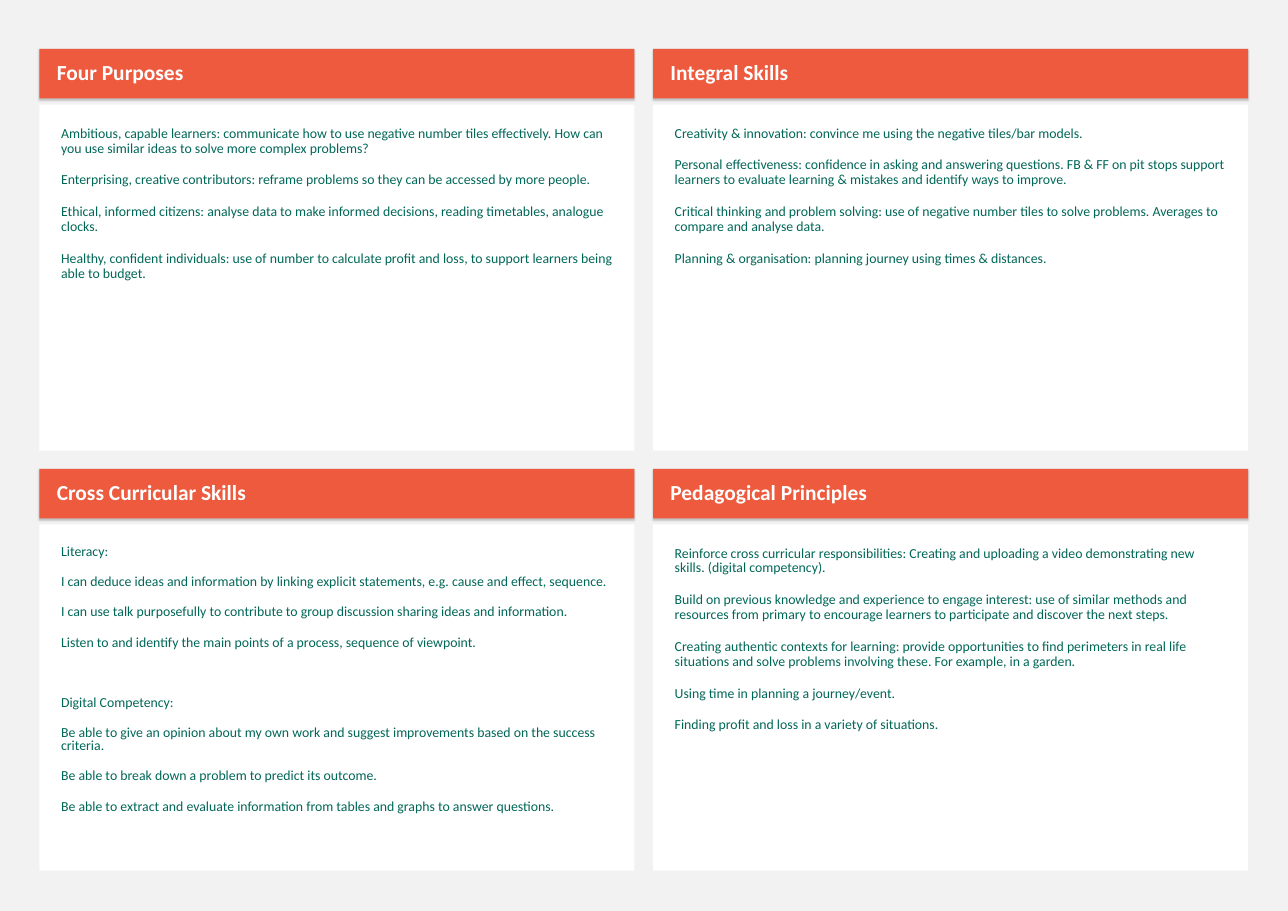
from lxml import etree
from pptx import Presentation
from pptx.dml.color import RGBColor
from pptx.enum import shapes, text
from pptx.oxml import ns
from pptx.util import Cm, Pt

HUES = {"page": "F2F2F2", "head": "ED5A3E", "card": "FFFFFF",
        "body": "006758", "title": "FFFFFF", "shade": "000000"}

# Grid of two columns by two rows, in centimetres
LEFT, TOP = 0.91, 1.13
STEP_X, STEP_Y = 14.15, 9.68
WIDE, HEAD_H, CARD_H = 13.72, 1.14, 7.98
CARD_DY = 1.28

# Heading, line spacing, groups of paragraphs
PANELS = [
    ("Four Purposes", 0.9, [[
        "Ambitious, capable learners: communicate how to use negative number tiles effectively. "
        "How can you use similar ideas to solve more complex problems?",
        "Enterprising, creative contributors: reframe problems so they can be accessed by more people.",
        "Ethical, informed citizens: analyse data to make informed decisions, reading timetables, "
        "analogue clocks.",
        "Healthy, confident individuals: use of number to calculate profit and loss, to support "
        "learners being able to budget."]]),
    ("Integral Skills", 0.9, [[
        "Creativity & innovation: convince me using the negative tiles/bar models.",
        "Personal effectiveness: confidence in asking and answering questions. FB & FF on pit stops "
        "support learners to evaluate learning & mistakes and identify ways to improve.",
        "Critical thinking and problem solving: use of negative number tiles to solve problems. "
        "Averages to compare and analyse data.",
        "Planning & organisation: planning journey using times & distances."]]),
    ("Cross Curricular Skills", 0.8, [
        ["Literacy:",
         "I can deduce ideas and information by linking explicit statements, e.g. cause and effect, "
         "sequence.",
         "I can use talk purposefully to contribute to group discussion sharing ideas and information.",
         "Listen to and identify the main points of a process, sequence of viewpoint."],
        ["Digital Competency:",
         "Be able to give an opinion about my own work and suggest improvements based on the success "
         "criteria.",
         "Be able to break down a problem to predict its outcome.",
         "Be able to extract and evaluate information from tables and graphs to answer questions."]]),
    ("Pedagogical Principles", 0.9, [[
        "Reinforce cross curricular responsibilities: Creating and uploading a video demonstrating "
        "new skills. (digital competency).",
        "Build on previous knowledge and experience to engage interest: use of similar methods and "
        "resources from primary to encourage learners to participate and discover the next steps.",
        "Creating authentic contexts for learning: provide opportunities to find perimeters in real "
        "life situations and solve problems involving these. For example, in a garden.",
        "Using time in planning a journey/event.",
        "Finding profit and loss in a variety of situations."]]),
]


def paint(fill, hue):
    fill.solid()
    fill.fore_color.rgb = RGBColor.from_string(HUES[hue])


def add_box(slide, x, y, high, hue, pads, anchor):
    """Add a filled box with inner margins: left, top, right, bottom."""
    box = slide.shapes.add_shape(shapes.MSO_SHAPE.RECTANGLE,
                                 Cm(x), Cm(y), Cm(WIDE), Cm(high))
    box.shadow.inherit = False
    paint(box.fill, hue)
    box.line.fill.background()
    frame = box.text_frame
    frame.word_wrap = True
    frame.vertical_anchor = anchor
    (frame.margin_left, frame.margin_top,
     frame.margin_right, frame.margin_bottom) = map(Cm, pads)
    return box


def add_text(frame, words, size=9, hue="body", bold=False, lead=0.9, before=11):
    """Write one paragraph, using the frame's first one while it is free."""
    para = frame.paragraphs[0]
    if para.runs:
        para = frame.add_paragraph()
    para.alignment = text.PP_ALIGN.LEFT
    para.line_spacing = lead
    para.space_before = Pt(before)
    run = para.add_run()
    run.text = words
    font = run.font
    font.name, font.size, font.bold = "Calibri", Pt(size), bold
    font.color.rgb = RGBColor.from_string(HUES[hue])


def add_shade(box):
    """Give a box a faint shadow along its lower edge."""
    effects = box._element.spPr.find(ns.qn("a:effectLst"))
    shade = etree.SubElement(effects, ns.qn("a:outerShdw"), blurRad="12700",
                             dist="12700", dir="5400000", rotWithShape="0")
    hue = etree.SubElement(shade, ns.qn("a:srgbClr"), val=HUES["shade"])
    etree.SubElement(hue, ns.qn("a:alpha"), val="20000")


def add_head(slide, x, y, words):
    box = add_box(slide, x, y, HEAD_H, "head", (0.4, 0.13, 0.25, 0.13),
                  text.MSO_ANCHOR.MIDDLE)
    add_shade(box)
    add_text(box.text_frame, words, size=14, hue="title", bold=True)


def add_card(slide, x, y, lead, groups):
    box = add_box(slide, x, y, CARD_H, "card", (0.5,) * 4, text.MSO_ANCHOR.TOP)
    for g, group in enumerate(groups):
        for i, words in enumerate(group):
            # A later group opens with a wider gap
            gap = 30.8 if g and i == 0 else 11
            add_text(box.text_frame, words, lead=lead, before=gap)


def main():
    deck = Presentation()
    deck.slide_width, deck.slide_height = Cm(29.7), Cm(21)
    slide = deck.slides.add_slide(deck.slide_layouts[6])
    paint(slide.background.fill, "page")

    # Panels, row by row
    for n, (title, lead, groups) in enumerate(PANELS):
        row, col = divmod(n, 2)
        x, y = LEFT + col * STEP_X, TOP + row * STEP_Y
        add_card(slide, x, y + CARD_DY, lead, groups)
        add_head(slide, x, y, title)

    deck.save("out.pptx")


if __name__ == "__main__":
    main()
